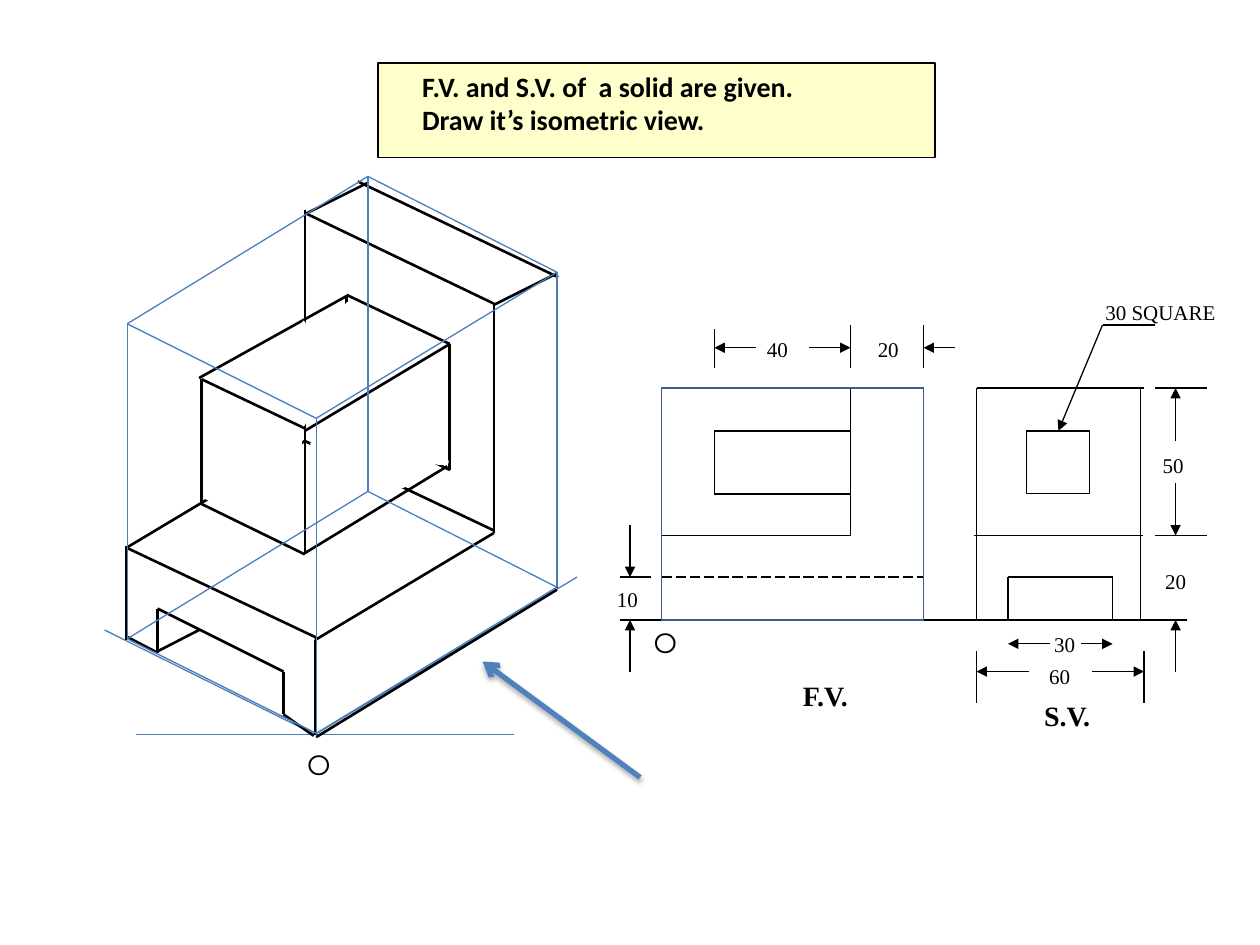
from dataclasses import dataclass
from itertools import pairwise
from lxml import etree
from pptx import Presentation
from pptx.dml.color import RGBColor
from pptx.enum import dml, shapes, text
from pptx.oxml.ns import qn
from pptx.util import Inches, Pt


@dataclass(frozen=True)
class Theme:
    ink: str = "000000"
    paper: str = "FFFFFF"
    panel: str = "FFFFCC"
    guide: str = "4B7EBC"
    frame: str = "3A5F8C"
    accent: str = "4F81BD"
    thin: float = 0.75
    medium: float = 1
    edge: float = 1.5
    heavy: float = 3
    small: int = 12
    large: int = 16
    title_font: str = "Calibri"
    drawing_font: str = "Times New Roman"
    origin_font: str = "Montserrat"


@dataclass(frozen=True)
class Box:
    x: float
    y: float
    w: float
    h: float

    def at(self, x, y):
        return Inches(self.x + x), Inches(self.y + y)


T = Theme()


def rgb(value):
    return RGBColor.from_string(value)


def add_line(s, box, a, b, color=T.ink, width=T.thin, tail=None, dash=None, shadow=False):
    c = s.shapes.add_connector(shapes.MSO_CONNECTOR.STRAIGHT, *box.at(*a), *box.at(*b))
    c.line.color.rgb = rgb(color)
    c.line.width = Pt(width)
    if dash:
        c.line.dash_style = dash
    if tail:
        etree.SubElement(c.line._get_or_add_ln(), qn("a:tailEnd"), type=tail)
    effects = etree.SubElement(c._element.spPr, qn("a:effectLst"))
    if shadow:
        outer = etree.SubElement(effects, qn("a:outerShdw"), blurRad="40000",
                                 dist="23000", dir="5400000", rotWithShape="0")
        tint = etree.SubElement(outer, qn("a:srgbClr"), val=T.ink)
        etree.SubElement(tint, qn("a:alpha"), val="35000")
    return c


def add_paths(s, box, paths, **style):
    for path in paths:
        for a, b in pairwise(path):
            add_line(s, box, a, b, **style)


def add_box(s, kind, box, x, y, w, h, fill=None, line=T.ink, width=T.thin):
    sp = s.shapes.add_shape(kind, *box.at(x, y), Inches(w), Inches(h))
    sp.shadow.inherit = False
    if fill:
        sp.fill.solid()
        sp.fill.fore_color.rgb = rgb(fill)
    else:
        sp.fill.background()
    sp.line.color.rgb = rgb(line)
    sp.line.width = Pt(width)
    return sp


def add_mask(s, box, kind, x, y, w, h, rotation=0):
    sp = add_box(s, kind, box, x, y, w, h, fill=T.paper, line=T.paper)
    sp.rotation = rotation
    return sp


def add_label(s, box, words, cx, cy, w=0.37, h=0.3, size=T.small, font=T.drawing_font, bold=False):
    sp = s.shapes.add_textbox(*box.at(cx - w / 2, cy - h / 2), Inches(w), Inches(h))
    tf = sp.text_frame
    tf.text = words
    tf.word_wrap = False
    tf.margin_left = tf.margin_right = 0
    tf.auto_size = text.MSO_AUTO_SIZE.NONE
    p = tf.paragraphs[0]
    p.alignment = text.PP_ALIGN.CENTER
    format_run(p.runs[0], size, font, bold)


def format_run(r, size, font, bold):
    r.font.size = Pt(size)
    r.font.name = font
    r.font.bold = bold
    r.font.color.rgb = rgb(T.ink)


def add_origin(s, box, cx, cy):
    add_label(s, box, "O", cx, cy, 0.39, 0.37, T.large, T.origin_font)


def add_title(s, box):
    sp = s.shapes.title
    sp.left, sp.top = box.at(0, 0)
    sp.width, sp.height = Inches(box.w), Inches(box.h)
    sp.fill.solid()
    sp.fill.fore_color.rgb = rgb(T.panel)
    sp.line.color.rgb = rgb(T.ink)
    sp.line.width = Pt(T.thin)
    tf = sp.text_frame
    tf.text = "F.V. and S.V. of  a solid are given.\nDraw it’s isometric view."
    tf.auto_size = text.MSO_AUTO_SIZE.NONE
    tf.vertical_anchor = text.MSO_ANCHOR.TOP
    tf.margin_left = Inches(0.35)
    for p in tf.paragraphs:
        p.alignment = text.PP_ALIGN.LEFT
        format_run(p.runs[0], T.large, T.title_font, True)


def add_enclosing_box(s, box):
    base = [(1.51, 4.82), (3.42, 3.66), (1.92, 2.9), (0.01, 4.07)]
    top = [(x, y - 2.5) for x, y in base]
    loops = [[*base, base[0]], [*top, top[0]]]
    add_paths(s, box, loops + list(zip(base, top)), color=T.guide)


def add_isometric_view(s, box):
    front = (1.5, 4.83)
    axes = [[(0.08, 4.83), (3.08, 4.83)], [front, (3.58, 3.58)], [front, (-0.17, 4)]]
    add_paths(s, box, axes, color=T.guide)

    def block_face(x, y):
        return [(x, y), (x, y - 1), (x - 0.82, y - 1.39), (x - 0.82, y - 0.4), (x, y)]

    edges = [
        [front, (1.5, 4.08), (2.92, 3.23), (2.92, 1.41), (1.42, 0.69)],
        [(2.92, 3.21), (1.42, 2.5), (1.42, 0.67)],
        [(3.42, 3.67), (3.42, 1.17)],
        [(3.43, 1.2), (1.84, 0.44)],
        [(2.92, 1.42), (3.42, 1.17)],
        [(1.42, 0.7), (1.92, 0.45)],
        [(1.51, 4.06), (0.01, 3.35)],
        [(0, 4.08), (0, 3.33)],
        [(0, 3.35), (1.42, 2.5)],
        block_face(2.57, 2.73),
        block_face(1.42, 3.4),
        [(0.58, 2), (1.75, 1.35)],
        [(1.42, 3.39), (2.55, 2.7)],
    ]
    add_paths(s, box, edges, width=T.edge)

    oval = shapes.MSO_SHAPE.OVAL
    side = add_mask(s, box, shapes.MSO_SHAPE.PARALLELOGRAM, 0.5, 2.34, 1.02, 0.75, 24.2)
    side.adjustments[0] = 0.34
    side._element.spPr.xfrm.set("flipH", "1")
    add_mask(s, box, oval, 1.37, 1.55, 0.08, 0.83)
    add_mask(s, box, oval, 1.69, 1.4, 0.15, 0.93)
    add_mask(s, box, oval, 1.6, 2.38, 1, 0.17, 24.6)
    add_paths(s, box, [[(1.42, 2.42), (2.57, 1.73)]], width=T.edge)
    add_mask(s, box, oval, 1.43, 2.62, 0.82, 0.14, 24.6)

    slot = [
        [(0, 4.05), (0.25, 4.18), (0.25, 3.83), (1.25, 4.33), (1.25, 4.67), (1.49, 4.84)],
        [(0.25, 4.17), (0.58, 4)],
        [(1.51, 4.85), (3.42, 3.68)],
    ]
    add_paths(s, box, slot, width=T.edge)
    add_origin(s, box, 1.53, 5.07)
    add_enclosing_box(s, box)
    add_line(s, box, (4.08, 5.17), (2.83, 4.25), T.accent, T.heavy, tail="arrow", shadow=True)


def add_front_view(s, box):
    w, h = box.w, box.h
    boss, wall, step, slot = 0.42, 1.5, 1.17, 1.5
    add_paths(s, box, [
        [(w, 0), (wall, 0), (wall, step), (0, step), (0, h), (w, h), (w, 0)],
        [(wall, 0.34), (boss, 0.34), (boss, 0.84), (wall, 0.84)],
        [(boss, -0.16), (boss, -0.47)],
        [(wall, -0.16), (wall, -0.5)],
        [(w, -0.16), (w, -0.5)],
        [(-0.33, slot), (-0.08, slot)],
        [(-0.33, h), (4.17, h)],
    ])
    add_line(s, box, (0, slot), (w, slot), dash=dml.MSO_LINE.LONG_DASH)
    add_paths(s, box, [
        [(0.75, -0.32), (boss, -0.32)], [(1.17, -0.32), (wall, -0.32)],
        [(w + 0.25, -0.32), (w, -0.32)],
        [(-0.25, 1.09), (-0.25, slot)], [(-0.25, 2.25), (-0.25, h)],
    ], tail="triangle")
    for words, cx, cy in [("40", 0.92, -0.31), ("20", 1.8, -0.31), ("10", -0.27, 1.68)]:
        add_label(s, box, words, cx, cy)
    add_label(s, box, "F.V.", 1.3, 2.44, 0.61, 0.37, T.large, bold=True)
    add_origin(s, box, 0.03, 2.02)
    add_box(s, shapes.MSO_SHAPE.RECTANGLE, box, 0, 0, w, h, line=T.frame, width=T.medium)


def add_side_view(s, box):
    w, h = box.w, box.h
    step, slot_left, slot_right = 1.17, 0.25, 1.08
    add_paths(s, box, [
        [(w, 0), (0, 0), (0, h), (slot_left, h), (slot_left, 1.5),
         (slot_right, 1.5), (slot_right, h), (w, h)],
        [(1.3, 0), (1.3, h)],
        [(-0.02, step), (1.32, step)],
        [(1.42, 0), (1.83, 0)], [(1.42, step), (1.83, step)],
        [(0, 2.09), (0, 2.5)], [(w, 2.09), (w, 2.5)],
        [(1, -0.5), (1.42, -0.5)],
    ])
    square = add_box(s, shapes.MSO_SHAPE.RECTANGLE, box, 0.4, 0.34, 0.5, 0.5, fill=T.paper)
    leader = add_line(s, box, (1, -0.5), (0.65, 0.34), tail="triangle")
    leader.end_connect(square, 0)
    add_paths(s, box, [
        [(1.58, 0.42), (1.58, 0)], [(1.58, 0.75), (1.58, step)], [(1.58, 2.25), (1.58, h)],
        [(0.42, 2.25), (0, 2.25)], [(0.92, 2.25), (w, 2.25)],
        [(0.58, 2.03), (slot_left, 2.03)], [(0.83, 2.03), (slot_right, 2.03)],
    ], tail="triangle")
    for words, cx, cy in [("20", 1.58, 1.53), ("50", 1.56, 0.61), ("60", 0.66, 2.29), ("30", 0.7, 2.03)]:
        add_label(s, box, words, cx, cy)
    add_label(s, box, "30 SQUARE", 1.46, -0.6, 1.07)
    add_label(s, box, "S.V.", 0.72, 2.6, 0.6, 0.37, T.large, bold=True)


def main():
    prs = Presentation()
    prs.slide_width, prs.slide_height = Inches(10), Inches(7.5)
    s = prs.slides.add_slide(prs.slide_layouts[5])
    add_title(s, Box(3, 0.5, 4.42, 0.75))
    add_isometric_view(s, Box(1, 1, 4, 5))
    add_front_view(s, Box(5.25, 3.08, 2.08, 1.84))
    add_side_view(s, Box(7.75, 3.08, 1.33, 1.84))
    prs.save("out.pptx")


if __name__ == "__main__":
    main()
